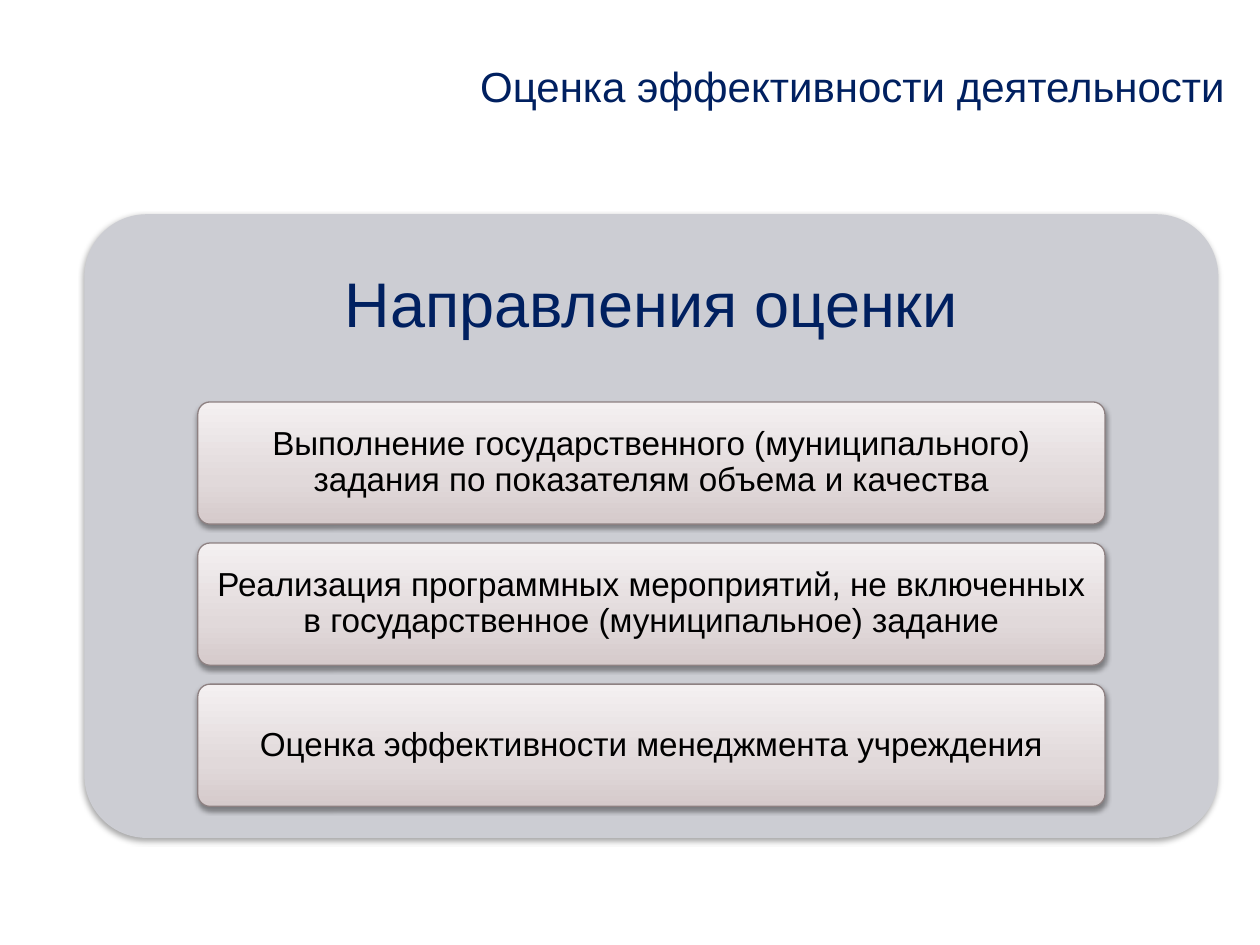
from copy import deepcopy

from lxml import etree
from pptx import Presentation
from pptx import util as u
from pptx.dml.color import RGBColor
from pptx.enum import shapes, text
from pptx.oxml import ns

NAVY = RGBColor(0x00, 0x20, 0x60)
BLACK = RGBColor(0x00, 0x00, 0x00)
PANEL_GREY = RGBColor(0xCC, 0xCD, 0xD3)
CARD_EDGE = RGBColor(0x8E, 0x81, 0x82)
CARD_STOPS = [
    (0, RGBColor(0xD5, 0xCA, 0xCB)),
    (0.35, RGBColor(0xE1, 0xD9, 0xDA)),
    (1, RGBColor(0xF4, 0xF0, 0xF1)),
]
DIRECTIONS = [
    "Выполнение государственного (муниципального) задания по показателям объема и качества",
    "Реализация программных мероприятий, не включенных в государственное (муниципальное) задание",
    "Оценка эффективности менеджмента учреждения",
]
CARD_TOP, CARD_STEP = 3.19, 1.12


class SlideBuilder:
    """Holds the slide and its style, and draws each kind of element."""

    font_name = "Arial"

    def __init__(self, slide):
        self.slide = slide

    def set_text(self, shape, wording, size, color, align, insets, spacing=1.0):
        frame = shape.text_frame
        frame.word_wrap = True
        frame.vertical_anchor = text.MSO_ANCHOR.MIDDLE
        frame.margin_left = frame.margin_right = u.Inches(insets[0])
        frame.margin_top = frame.margin_bottom = u.Inches(insets[1])
        paragraph = frame.paragraphs[0]
        paragraph.alignment = align
        paragraph.line_spacing = spacing
        run = paragraph.add_run()
        run.text = wording
        run.font.name = self.font_name
        run.font.size = u.Pt(size)
        run.font.color.rgb = color

    def label(self, box, *style):
        self.set_text(self.slide.shapes.add_textbox(*map(u.Inches, box)), *style)

    def rounded(self, box, opacity, distance):
        shape = self.slide.shapes.add_shape(
            shapes.MSO_SHAPE.ROUNDED_RECTANGLE, *map(u.Inches, box))
        shape.adjustments[0] = 0.1
        shape.shadow.inherit = False
        effects = shape.element.spPr.find(ns.qn("a:effectLst"))
        shadow = etree.SubElement(
            effects, ns.qn("a:outerShdw"), blurRad=str(u.Pt(3.1)),
            dist=str(u.Pt(distance)), dir="5400000", rotWithShape="0")
        tint = etree.SubElement(shadow, ns.qn("a:srgbClr"), val="000000")
        etree.SubElement(tint, ns.qn("a:alpha"), val=str(opacity * 1000))
        return shape

    def panel(self, box):
        panel = self.rounded(box, 35, 1.8)
        panel.fill.solid()
        panel.fill.fore_color.rgb = PANEL_GREY
        panel.line.fill.background()

    def card(self, box, wording):
        card = self.rounded(box, 38, 1.6)
        card.fill.gradient()
        card.fill.gradient_angle = 90
        stop_list = card.element.spPr.find(".//" + ns.qn("a:gsLst"))
        stop_list.append(deepcopy(stop_list[0]))
        for stop, (position, color) in zip(card.fill.gradient_stops, CARD_STOPS):
            stop.position = position
            stop.color.rgb = color
        card.line.color.rgb = CARD_EDGE
        card.line.width = u.Pt(0.75)
        self.set_text(card, wording, 19, BLACK, text.PP_ALIGN.CENTER, (0.05, 0.04), 0.9)


def main():
    deck = Presentation()
    deck.slide_width, deck.slide_height = u.Inches(10), u.Inches(7.5)
    builder = SlideBuilder(deck.slides.add_slide(deck.slide_layouts[6]))
    builder.label((2.17, 0.21, 7.65, 0.94), "Оценка эффективности деятельности",
                  24, NAVY, text.PP_ALIGN.RIGHT, (0.1, 0.05))
    builder.panel((0.67, 1.7, 9, 4.95))
    builder.label((0.67, 1.7, 9, 1.48), "Направления оценки",
                  36, NAVY, text.PP_ALIGN.CENTER, (0.15, 0.15), 0.9)
    for row, direction in enumerate(DIRECTIONS):
        builder.card((1.57, CARD_TOP + row * CARD_STEP, 7.2, 0.97), direction)
    deck.save("out.pptx")


if __name__ == "__main__":
    main()
